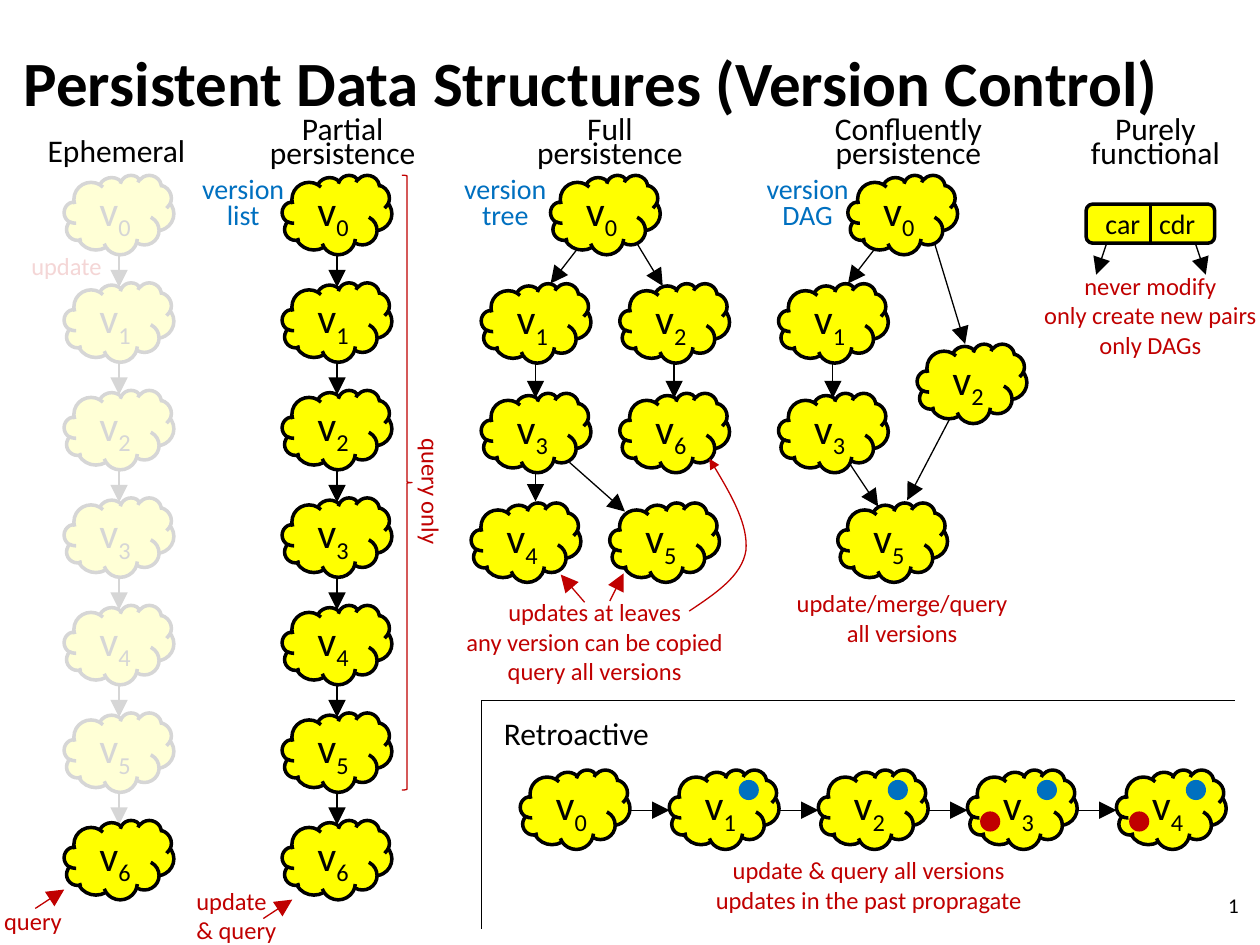
from typing import NamedTuple

from lxml.etree import SubElement
from pptx import Presentation
from pptx.dml.color import RGBColor as Rgb
from pptx.enum.shapes import MSO_CONNECTOR as Conn, MSO_SHAPE as Kind
from pptx.enum.text import MSO_ANCHOR as Anchor, MSO_AUTO_SIZE as Auto, PP_ALIGN as Align
from pptx.oxml.ns import qn
from pptx.util import Inches, Pt

HUES = {"ink": "000000", "red": "C00000", "blue": "0070C0", "gold": "FFFF00", "white": "FFFFFF"}
WIDE, HIGH = 0.87, 0.63          # size of a version cloud
TOP, STEP = 1.39, 5.12 / 6       # version columns
ROWS = (1.39, 2.25, 3.12, 3.99)  # version trees


class Cloud(NamedTuple):
    num: int
    x: float
    y: float


class Arrow(NamedTuple):
    x1: float
    y1: float
    x2: float
    y2: float
    hue: str = "ink"


class Label(NamedTuple):
    text: str
    x: float
    y: float
    w: float
    h: float
    size: int = 14
    hue: str = "red"
    align: Align = Align.CENTER
    lead: int = 0
    turn: int = 0


prs = Presentation()
prs.slide_width, prs.slide_height = Inches(10), Inches(7.5)
shapes = prs.slides.add_slide(prs.slide_layouts[6]).shapes


def color(name: str) -> Rgb:
    return Rgb.from_string(HUES[name])


def write(frame, text: str, *, size: int, hue: str = "ink", bold: bool = False,
          align: Align = Align.CENTER, anchor: Anchor = Anchor.MIDDLE, lead: int = 0) -> list:
    """Fill a frame: a newline starts a paragraph, a bar starts a run."""
    frame.word_wrap, frame.vertical_anchor = True, anchor
    runs = []
    for i, line in enumerate(text.split("\n")):
        para = frame.paragraphs[0] if i == 0 else frame.add_paragraph()
        para.alignment = align
        if lead:
            para.line_spacing = Pt(lead)
        for piece in line.split("|"):
            run = para.add_run()
            run.text = piece
            font = run.font
            font.name, font.size, font.bold = "Calibri", Pt(size), bold
            font.color.rgb = color(hue)
            runs.append(run)
    return runs


def box(x: float, y: float, w: float, h: float):
    return shapes.add_textbox(Inches(x), Inches(y), Inches(w), Inches(h))


def put(lab: Label) -> None:
    item = box(lab.x, lab.y, lab.w, lab.h)
    item.rotation = lab.turn
    write(item.text_frame, lab.text, size=lab.size, hue=lab.hue,
          align=lab.align, anchor=Anchor.TOP, lead=lab.lead)
    item.text_frame.auto_size = Auto.SHAPE_TO_FIT_TEXT


def shape(kind: Kind, x: float, y: float, w: float, h: float,
          fill: str = "", line: str = "", width: float = 2):
    item = shapes.add_shape(kind, Inches(x), Inches(y), Inches(w), Inches(h))
    paint(item, fill, line, width)
    return item


def paint(item, fill: str, line: str, width: float) -> None:
    item.shadow.inherit = False
    if fill:
        item.fill.solid()
        item.fill.fore_color.rgb = color(fill)
    else:
        item.fill.background()
    if line:
        item.line.color.rgb = color(line)
        item.line.width = Pt(width)
    else:
        item.line.fill.background()


def tip(item, size: str) -> None:
    SubElement(item.line._get_or_add_ln(), qn("a:tailEnd"), type="triangle", w=size, len=size)


def draw(ray: Arrow, head: bool = True, width: float = 0.75):
    item = shapes.add_connector(Conn.STRAIGHT, *map(Inches, ray[:4]))
    item.line.color.rgb, item.line.width = color(ray.hue), Pt(width)
    if head:
        tip(item, "lg")
    SubElement(item._element.spPr, qn("a:effectLst"))
    return item


def puff(cloud: Cloud) -> None:
    item = shape(Kind.CLOUD, cloud.x, cloud.y, WIDE, HIGH, "gold", "ink")
    runs = write(item.text_frame, f"v|{cloud.num}", size=24)
    runs[1].font._element.set("baseline", "-25000")


def column(x: float) -> None:
    """Versions 0 to 5, with an arrow down from each."""
    for i in range(6):
        puff(Cloud(i, x, TOP + i * STEP))
    for i in range(6):
        y, mid = TOP + HIGH + i * STEP, x + WIDE / 2
        draw(Arrow(mid, y, mid, y + 0.26))


def curve(pts: list, hue: str) -> None:
    """Draw Bezier pieces; each takes three points after the first."""
    pen = shapes.build_freeform(*map(Inches, pts[0]), scale=1.0)
    pen.add_line_segments([tuple(map(Inches, p)) for p in pts[1:]], close=False)
    item = pen.convert_to_shape()
    paint(item, "", hue, 0.75)
    tip(item, "med")
    legs = list(item._element.iter(qn("a:lnTo")))
    for i in range(0, len(legs), 3):
        bend = SubElement(legs[i].getparent(), qn("a:cubicBezTo"))
        for leg in legs[i:i + 3]:
            bend.append(leg[0])
            leg.getparent().remove(leg)


# Title and page number
write(box(0.09, 0.29, 9.91, 0.71).text_frame, "Persistent Data Structures (Version Control)",
      size=36, bold=True, align=Align.LEFT)
write(box(7.6, 6.98, 2.33, 0.4).text_frame, "1", size=12, align=Align.RIGHT)

# Ephemeral: old versions fade under a veil
column(0.51)
put(Label("update", 0.15, 1.94, 0.87, 0.34, align=Align.LEFT))
veil = shape(Kind.RECTANGLE, 0.2, 1.31, 1.26, 5.28, "white")
SubElement(veil._element.spPr.find(qn("a:solidFill"))[0], qn("a:alpha"), val="84000")

# Partial persistence
column(2.24)
shape(Kind.RIGHT_BRACE, 3.19, 1.39, 0.08, 4.88, line="red", width=0.75)
for x in (0.51, 2.24):
    puff(Cloud(6, x, TOP + 6 * STEP))

# Full and confluent persistence
for ray in (
    Arrow(4.61, 1.94, 4.37, 2.25), Arrow(5.06, 1.94, 5.26, 2.27),
    Arrow(4.25, 2.88, 4.25, 3.16), Arrow(5.35, 2.88, 5.35, 3.16),
    Arrow(4.25, 3.75, 4.25, 3.98), Arrow(4.52, 3.67, 4.96, 4.06),
    Arrow(6.97, 1.94, 6.73, 2.25), Arrow(7.42, 1.94, 7.66, 2.73),
    Arrow(6.61, 2.88, 6.61, 3.16), Arrow(6.75, 3.69, 6.97, 4.02),
    Arrow(7.54, 3.32, 7.2, 3.97),
):
    draw(ray)
for cloud in (
    Cloud(0, 4.37, ROWS[0]), Cloud(1, 3.82, ROWS[1]), Cloud(2, 4.92, ROWS[1]),
    Cloud(3, 3.82, ROWS[2]), Cloud(6, 4.92, ROWS[2]), Cloud(4, 3.74, ROWS[3]),
    Cloud(5, 4.84, ROWS[3]),
    Cloud(0, 6.73, ROWS[0]), Cloud(1, 6.18, ROWS[1]), Cloud(2, 7.28, 2.73),
    Cloud(3, 6.18, ROWS[2]), Cloud(5, 6.65, ROWS[3]),
):
    puff(cloud)
curve([(5.47, 4.85), (5.68, 4.71), (5.89, 4.57), (5.92, 4.37),
       (5.94, 4.17), (5.79, 3.9), (5.63, 3.64)], "red")

# Purely functional: a pair with two pointers
pair = shape(Kind.ROUNDED_RECTANGLE, 8.62, 1.62, 1.02, 0.31, "gold", "ink")
gap = write(pair.text_frame, "car| |cdr", size=16)[1]
gap.font._element.set("spc", "720")
split = draw(Arrow(9.13, 1.93, 9.13, 1.62), head=False, width=1.5)
split.begin_connect(pair, 2)
split.end_connect(pair, 0)
draw(Arrow(8.78, 1.94, 8.7, 2.18))
draw(Arrow(9.49, 1.94, 9.57, 2.18))

# Retroactive: frame, timeline and marks
draw(Arrow(3.82, 5.56, 3.82, 7.37), head=False)
draw(Arrow(3.82, 5.56, 9.8, 5.56), head=False)
PACE = 1.183
for i in range(5):
    x = 4.13 + i * PACE
    puff(Cloud(i, x, 6.11))
    if i:
        draw(Arrow(x - PACE + WIDE, 6.43, x, 6.43))
        shape(Kind.OVAL, x + 0.55, 6.19, 0.16, 0.16, "blue")
    if i > 2:
        shape(Kind.OVAL, x + 0.1, 6.44, 0.16, 0.16, "red")

# Red pointers from the notes
for ends in ((0.28, 7.21, 0.51, 7.06), (2.09, 7.29, 2.32, 7.14),
             (4.64, 4.78, 4.45, 4.56), (4.84, 4.77, 4.95, 4.55)):
    draw(Arrow(*ends, "red"))

# Headings, notes and version labels
for lab in (
    Label("Ephemeral", 0.28, 0.99, 1.34, 0.4, 18, "ink", Align.LEFT),
    Label("Partial persistence", 2.01, 0.92, 1.42, 0.49, 18, "ink", lead=14),
    Label("Full\npersistence", 4.13, 0.92, 1.42, 0.51, 18, "ink", lead=14),
    Label("Confluently\npersistence", 6.5, 0.92, 1.42, 0.51, 18, "ink", lead=14),
    Label("Purely functional", 8.46, 0.92, 1.42, 0.51, 18, "ink", lead=14),
    Label("Retroactive", 3.9, 5.72, 3.86, 0.31, 18, "ink", Align.LEFT, 14),
    Label("query", -0.59, 7.14, 1.18, 0.34, align=Align.RIGHT),
    Label("query only", 2.83, 3.66, 1.18, 0.34, align=Align.RIGHT, turn=90),
    Label("update\n& query", 1.46, 6.98, 0.87, 0.57, align=Align.LEFT),
    Label("updates at leaves\nany version can be copied\nquery all versions", 3.58, 4.69, 2.28, 0.81),
    Label("update/merge/query\nall versions", 6.02, 4.62, 2.28, 0.57),
    Label("never modify\nonly create new pairs\nonly DAGs", 7.99, 2.1, 2.28, 0.81),
    Label("update & query all versions\nupdates in the past propragate", 4.69, 6.74, 4.41, 0.57),
    Label("version list", 1.46, 1.37, 0.94, 0.54, 16, "blue", lead=15),
    Label("version\ntree", 3.5, 1.37, 1.02, 0.54, 16, "blue", lead=15),
    Label("version DAG", 5.94, 1.37, 0.94, 0.52, 16, "blue", lead=15),
):
    put(lab)

prs.save("out.pptx")
